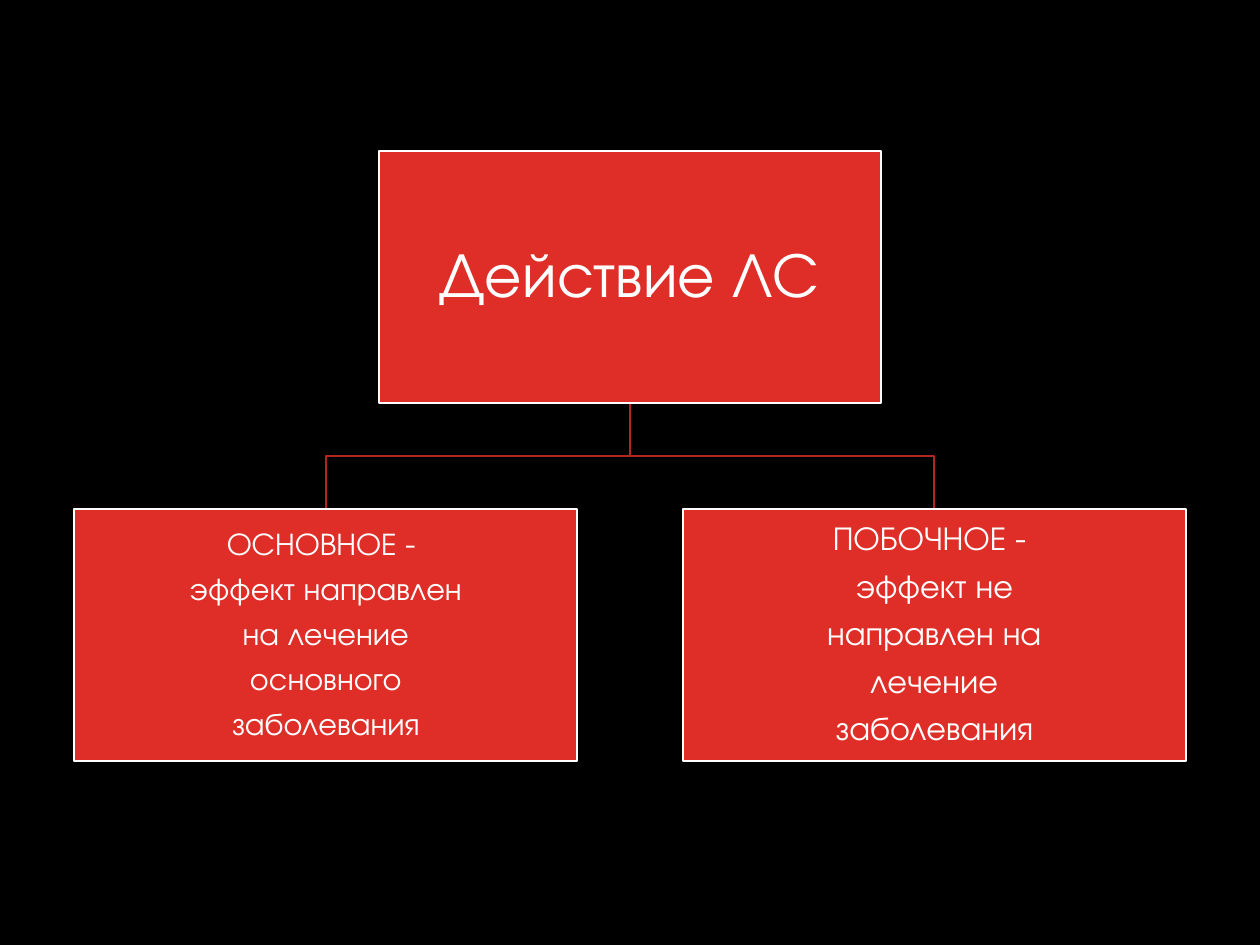
from pptx import Presentation
from pptx.dml.color import RGBColor
from pptx.enum.shapes import MSO_SHAPE
from pptx.enum.text import MSO_ANCHOR, PP_ALIGN
from pptx.util import Inches, Pt

RECT = MSO_SHAPE.RECTANGLE
MIDDLE = MSO_ANCHOR.MIDDLE
CENTER = PP_ALIGN.CENTER
BLACK = RGBColor(0x00, 0x00, 0x00)
WHITE = RGBColor(0xFF, 0xFF, 0xFF)
RED = RGBColor(0xDF, 0x2E, 0x28)
DARK = RGBColor(0xB3, 0x25, 0x20)
FONT = "TeX Gyre Adventor"

WIDE, HIGH = 10, 7.5
BOX_W, BOX_H = 3.99, 2
STEP = 2.415
TOP, GAP = 1.2, 0.84
LOW = TOP + BOX_H + GAP

ROOT = ["Действие ЛС"]
LEAVES = [
    (-1, 18, ["ОСНОВНОЕ - ", "эффект направлен", "на лечение",
              "основного", "заболевания"]),
    (1, 19, ["ПОБОЧНОЕ - ", "эффект не", "направлен на",
             "лечение", "заболевания"]),
]


def mid(col):
    """Return the centre of a column counted from the slide's middle."""
    return WIDE / 2 + col * STEP


def style(item, values):
    """Set each named attribute of an object."""
    for name, value in values.items():
        setattr(item, name, value)


def outline(shape, color):
    """Give a shape a thin line and no shadow."""
    shape.shadow.inherit = False
    shape.line.color.rgb = color
    shape.line.width = Pt(1)


def add_link(slide, col):
    """Draw the bent line from the root box to a leaf box."""
    start, bend = TOP + BOX_H, LOW - GAP / 2
    points = [(mid(0), bend), (mid(col), bend), (mid(col), LOW)]
    pen = slide.shapes.build_freeform(
        Inches(mid(0)), Inches(start))
    pen.add_line_segments(
        [(Inches(x), Inches(y)) for x, y in points], close=False)
    link = pen.convert_to_shape()
    link.fill.background()
    outline(link, DARK)


def add_box(slide, col, top, size, lines, inset):
    """Add a red box with one centred paragraph per line."""
    left = mid(col) - BOX_W / 2
    box = slide.shapes.add_shape(
        RECT, Inches(left), Inches(top), Inches(BOX_W), Inches(BOX_H))
    box.fill.solid()
    box.fill.fore_color.rgb = RED
    outline(box, WHITE)
    frame = box.text_frame
    pad = Inches(inset)
    style(frame, {
        "word_wrap": True, "vertical_anchor": MIDDLE,
        "margin_left": pad, "margin_right": pad,
        "margin_top": pad, "margin_bottom": pad})
    frame.text = "\n".join(lines)
    for para in frame.paragraphs:
        style(para, {"alignment": CENTER, "line_spacing": 0.9,
                     "space_after": Pt(size * 0.35)})
        style(para.font, {"name": FONT, "size": Pt(size)})
        para.font.color.rgb = WHITE


def main():
    """Build the slide and save it."""
    deck = Presentation()
    style(deck, {"slide_width": Inches(WIDE), "slide_height": Inches(HIGH)})
    slide = deck.slides.add_slide(deck.slide_layouts[6])
    slide.background.fill.solid()
    slide.background.fill.fore_color.rgb = BLACK
    for col, _, _ in LEAVES:
        add_link(slide, col)
    add_box(slide, 0, TOP, 36, ROOT, 0.03)
    for col, size, lines in LEAVES:
        add_box(slide, col, LOW, size, lines, 0.01)
    deck.save("out.pptx")


if __name__ == "__main__":
    main()
